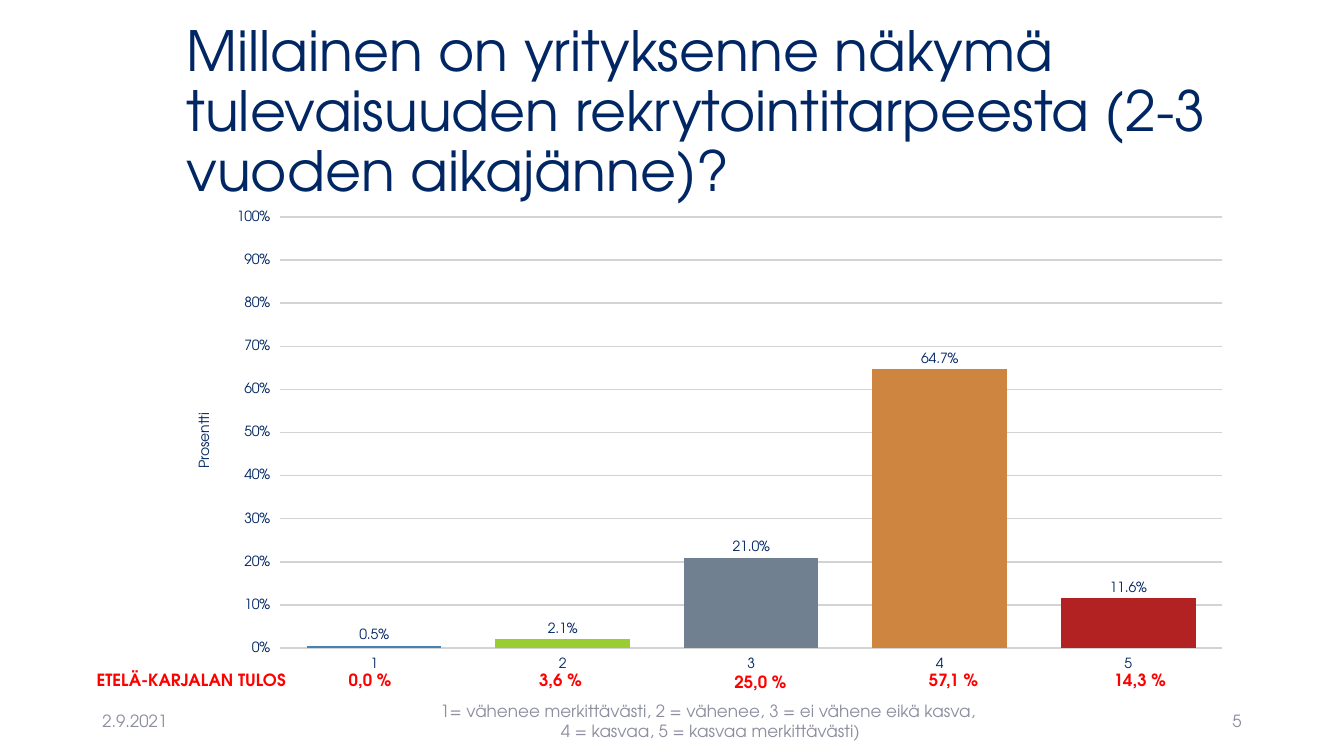
import pptx
import pptx.chart.data
import pptx.dml.color
import pptx.enum.chart
import pptx.enum.text
import pptx.oxml
import pptx.util
from pptx.oxml.ns import nsdecls

Pt = pptx.util.Pt
ALIGN = pptx.enum.text.PP_ALIGN
ANCHOR = pptx.enum.text.MSO_ANCHOR
FACE = "TeX Gyre Adventor"
COLOURS = {"navy": "002663", "grey": "8C8E9F", "red": "FF0000", "grid": "D3D3D3"}
BAR_COLOURS = ["4682B4", "9ACD32", "708090", "CD853F", "B22222"]
SHARES = [0.005, 0.021, 0.21, 0.647, 0.116]
REGION_RESULTS = [
    ("ETELÄ-KARJALAN TULOS", 62, 475, 154),
    ("0,0 %", 242, 475, 47),
    ("3,6 %", 378, 475, 47),
    ("25,0 %", 517.5, 476, 58),
    ("57,1 %", 656.5, 475, 58),
    ("14,3 %", 788.5, 475, 58),
]


def rgb(value):
    """Turn a hex string into a colour."""
    return pptx.dml.color.RGBColor.from_string(value)


def style_font(font, size, colour, bold=False):
    """Give a font the deck's face with a size, colour and weight."""
    font.name = FACE
    font.size = Pt(size)
    font.bold = bold
    font.color.rgb = rgb(COLOURS[colour])


def add_title(page, text):
    """Place and format the title placeholder."""
    title = page.shapes.title
    title.left, title.top, title.width, title.height = Pt(126), Pt(28.8), Pt(762.5), Pt(104.4)
    frame = title.text_frame
    frame.text = text
    frame.word_wrap = True
    frame.auto_size = pptx.enum.text.MSO_AUTO_SIZE.NONE
    frame.vertical_anchor = ANCHOR.MIDDLE
    para = frame.paragraphs[0]
    para.alignment = ALIGN.LEFT
    para.line_spacing = 0.9
    style_font(para.font, 39.6, "navy")


def add_text(page, lines, left, top, width, height, colour="grey",
             align=ALIGN.LEFT, anchor=ANCHOR.MIDDLE, bold=False):
    """Add a 12-point text box with one paragraph per line."""
    box = page.shapes.add_textbox(Pt(left), Pt(top), Pt(width), Pt(height))
    frame = box.text_frame
    frame.word_wrap = True
    frame.vertical_anchor = anchor
    frame.text = "\n".join(lines)
    for para in frame.paragraphs:
        para.alignment = align
        style_font(para.font, 12, colour, bold)


def set_plot_area(chart, left, top, width, height):
    """Fix the inner plot area as fractions of the chart."""
    plot_area = chart._chartSpace.chart.plotArea
    for old in plot_area.findall(pptx.oxml.ns.qn("c:layout")):
        plot_area.remove(old)
    plot_area.insert(0, pptx.oxml.parse_xml(
        f'<c:layout {nsdecls("c")}><c:manualLayout><c:layoutTarget val="inner"/>'
        '<c:xMode val="edge"/><c:yMode val="edge"/>'
        f'<c:x val="{left}"/><c:y val="{top}"/><c:w val="{width}"/><c:h val="{height}"/>'
        '</c:manualLayout></c:layout>'))


def style_axes(chart):
    """Format both axes, the gridlines and the value axis title."""
    for axis in (chart.category_axis, chart.value_axis):
        axis.format.line.fill.background()
        style_font(axis.tick_labels.font, 10, "navy")
    values = chart.value_axis
    values.minimum_scale, values.maximum_scale, values.major_unit = 0, 1, 0.1
    values.tick_labels.number_format = "0%"
    values.tick_labels.number_format_is_linked = False
    values.has_major_gridlines = True
    values.major_gridlines.format.line.color.rgb = rgb(COLOURS["grid"])
    values.major_gridlines.format.line.width = Pt(1)
    frame = values.axis_title.text_frame
    frame.text = "Prosentti"
    style_font(frame.paragraphs[0].runs[0].font, 10, "navy")


def add_share_chart(page):
    """Add the column chart of answer shares."""
    data = pptx.chart.data.CategoryChartData()
    data.categories = ["1", "2", "3", "4", "5"]
    data.add_series("Series 1", SHARES)
    chart = page.shapes.add_chart(
        pptx.enum.chart.XL_CHART_TYPE.COLUMN_CLUSTERED,
        Pt(126), Pt(144), Pt(762.5), Pt(342.7), data).chart
    chart.has_title = False
    chart.has_legend = False
    style_font(chart.font, 18, "navy")
    style_axes(chart)
    set_plot_area(chart, 0.097, 0.032, 0.883, 0.899)
    plot = chart.plots[0]
    plot.gap_width = 40
    plot.vary_by_categories = False
    plot.has_data_labels = True
    labels = plot.data_labels
    labels.show_value = True
    labels.number_format = "0.0%"
    labels.number_format_is_linked = False
    labels.position = pptx.enum.chart.XL_LABEL_POSITION.OUTSIDE_END
    style_font(labels.font, 10, "navy")
    for index, colour in enumerate(BAR_COLOURS):
        fill = plot.series[0].points[index].format.fill
        fill.solid()
        fill.fore_color.rgb = rgb(colour)


def main():
    """Build the slide and save the deck."""
    deck = pptx.Presentation()
    deck.slide_width, deck.slide_height = Pt(960), Pt(540)
    page = deck.slides.add_slide(deck.slide_layouts[5])
    add_title(page, "Millainen on yrityksenne näkymä tulevaisuuden "
                    "rekrytointitarpeesta (2-3 vuoden aikajänne)?")
    add_text(page, ["2.9.2021"], 66, 500.5, 216, 28.8)
    add_text(page, ["5"], 678, 500.5, 216, 28.8, align=ALIGN.RIGHT)
    add_share_chart(page)
    add_text(page, ["1= vähenee merkittävästi, 2 = vähenee, 3 = ei vähene eikä kasva, ",
                    "4 = kasvaa, 5 = kasvaa merkittävästi)"],
             271.5, 500.5, 472, 28.8, align=ALIGN.CENTER)
    for text, left, top, width in REGION_RESULTS:
        add_text(page, [text], left, top, width, 21.8, "red", anchor=ANCHOR.TOP, bold=True)
    deck.save("out.pptx")


if __name__ == "__main__":
    main()
